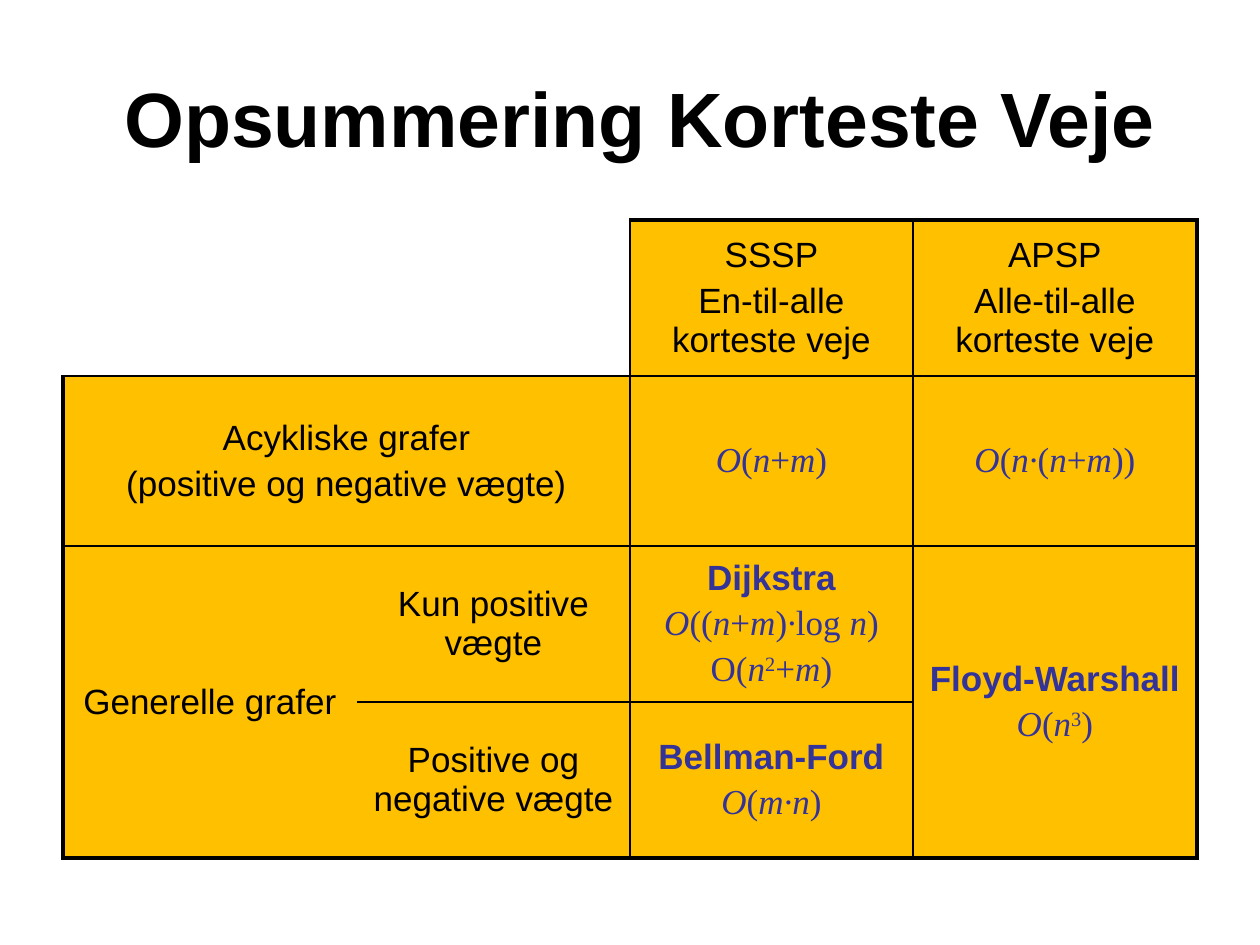
from lxml import etree
from pptx import Presentation
from pptx.dml.color import RGBColor
from pptx.enum.text import MSO_ANCHOR, PP_ALIGN
from pptx.oxml.ns import qn
from pptx.util import Pt

PX = 7257
MIDDLE = MSO_ANCHOR.MIDDLE
CENTER = PP_ALIGN.CENTER
BLACK = RGBColor(0, 0, 0)
BLUE = RGBColor(0x33, 0x33, 0x99)
GOLD = RGBColor(0xFF, 0xC0, 0x00)
THICK, THIN = 2.25, 1
COLS = [294, 273, 283, 284]
ROWS = [156, 170, 156, 156]
PLAIN = ("Arial", BLACK, False)
NAME = ("Arial", BLUE, True)
MATH = ("Times New Roman", BLUE, False)

BLOCKS = [
    (0, 0, 1, 2, "LT", []),
    (0, 2, 1, 1, "", [(PLAIN, "SSSP"), (PLAIN, "En-til-alle korteste veje")]),
    (0, 3, 1, 1, "", [(PLAIN, "APSP"), (PLAIN, "Alle-til-alle korteste veje")]),
    (1, 0, 1, 2, "", [(PLAIN, "Acykliske grafer"),
                      (PLAIN, "(positive og negative vægte)")]),
    (1, 2, 1, 1, "", [(MATH, "_O|(|_n|+|_m|)")]),
    (1, 3, 1, 1, "", [(MATH, "_O|(|_n·|(|_n|+|_m|))")]),
    (2, 0, 2, 1, "R", [(PLAIN, "Generelle grafer")]),
    (2, 1, 1, 1, "L", [(PLAIN, "Kun positive vægte")]),
    (2, 2, 1, 1, "", [(NAME, "Dijkstra"),
                      (MATH, "_O|((|_n|+|_m|)|_·|log |_n|)"),
                      (MATH, "O(|_n|^2|+|_m|)")]),
    (2, 3, 2, 1, "", [(NAME, "Floyd-Warshall"), (MATH, "_O|(|_n|^3|)")]),
    (3, 1, 1, 1, "L", [(PLAIN, "Positive og negative vægte")]),
    (3, 2, 1, 1, "", [(NAME, "Bellman-Ford"), (MATH, "_O|(|_m·n|)")]),
]


def edge(cell, side, width):
    props = cell._tc.get_or_add_tcPr()
    line = etree.SubElement(props, qn("a:ln" + side), w=str(Pt(width)))
    if width:
        fill = etree.SubElement(line, qn("a:solidFill"))
        etree.SubElement(fill, qn("a:srgbClr"), val=str(BLACK))
    else:
        etree.SubElement(line, qn("a:noFill"))


def write(par, style, text):
    face, color, bold = style
    par.alignment = CENTER
    for part in text.split("|"):
        run = par.add_run()
        run.text = part.lstrip("_^")
        font = run.font
        font.name, font.size, font.bold = face, Pt(20), bold
        font.color.rgb = color
        font.italic = part.startswith("_")
        if part.startswith("^"):
            run._r.get_or_add_rPr().set("baseline", "30000")


deck = Presentation()
deck.slide_width, deck.slide_height = 1260 * PX, 945 * PX
slide = deck.slides.add_slide(deck.slide_layouts[5])

title = slide.shapes.title
title.left, title.top = 63 * PX, 38 * PX
title.width, title.height = 1155 * PX, 157 * PX
frame = title.text_frame
frame.text = "Opsummering Korteste Veje"
frame.vertical_anchor = MIDDLE
head = frame.paragraphs[0]
head.alignment = CENTER
font = head.runs[0].font
font.name, font.size, font.bold = "Arial", Pt(44), True
font.color.rgb = BLACK

table = slide.shapes.add_table(
    len(ROWS), len(COLS), 63 * PX, 220 * PX, sum(COLS) * PX, sum(ROWS) * PX
).table
table.first_row = table.horz_banding = False
for col, width in zip(table.columns, COLS):
    col.width = width * PX
for row, height in zip(table.rows, ROWS):
    row.height = height * PX

for top, left, high, wide, bare, lines in BLOCKS:
    low, right = top + high, left + wide
    outer = {"L": left == 0, "R": right == len(COLS),
             "T": top == 0, "B": low == len(ROWS)}
    for y in range(top, low):
        for x in range(left, right):
            cell = table.cell(y, x)
            for side, rim in outer.items():
                edge(cell, side, 0 if side in bare else THICK if rim else THIN)
            if lines:
                cell.fill.solid()
                cell.fill.fore_color.rgb = GOLD
            else:
                cell.fill.background()
    cell = table.cell(top, left)
    if high * wide > 1:
        cell.merge(table.cell(low - 1, right - 1))
    cell.vertical_anchor = MIDDLE
    frame = cell.text_frame
    for i, (style, text) in enumerate(lines):
        par = frame.add_paragraph() if i else frame.paragraphs[0]
        if i:
            par.space_before = Pt(4)
        write(par, style, text)

deck.save("out.pptx")
